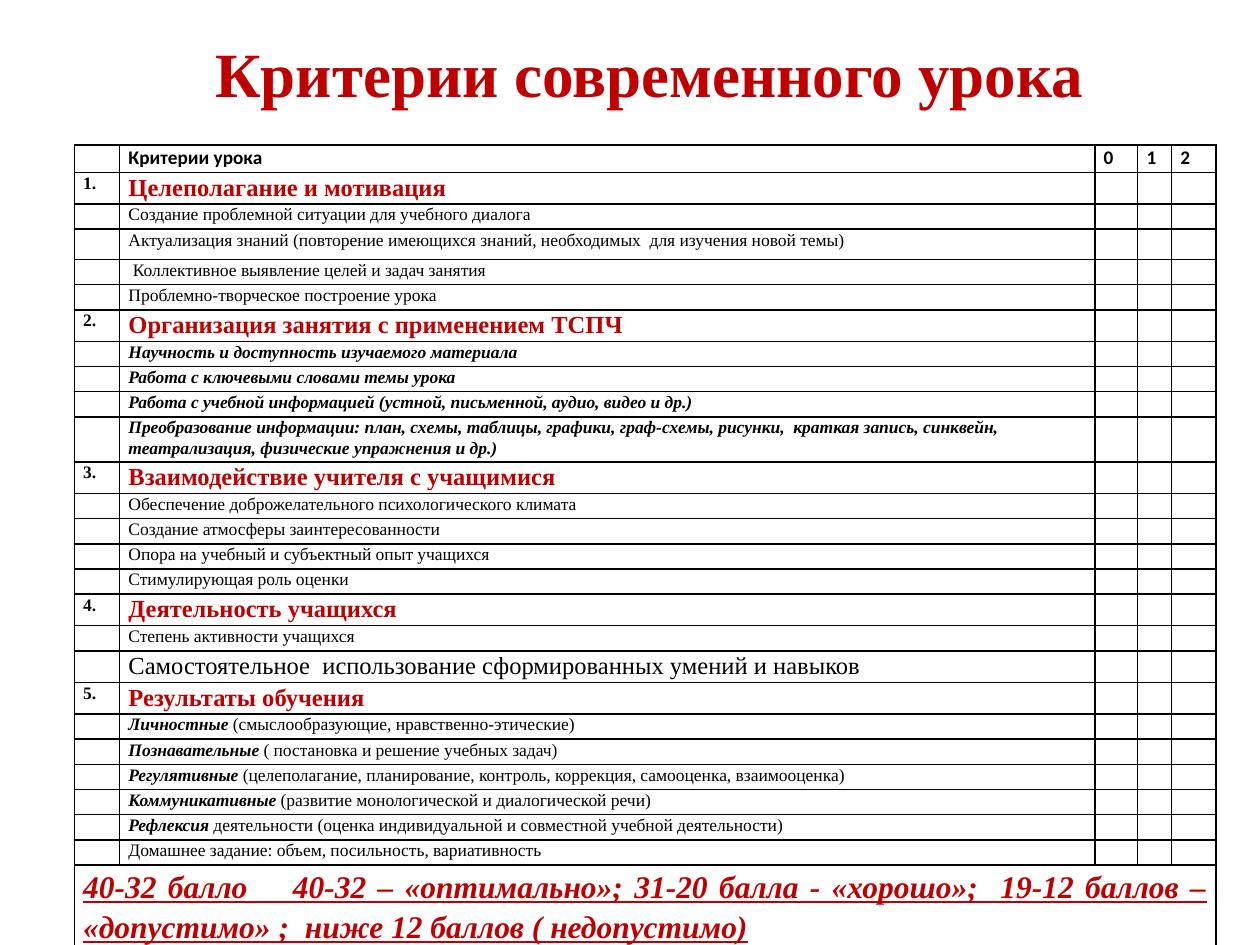
from dataclasses import dataclass

from lxml import etree
from pptx import Presentation
from pptx import util as u
from pptx.dml.color import RGBColor
from pptx.enum import text
from pptx.oxml.ns import qn


@dataclass(frozen=True)
class Theme:
    serif: str = "Times New Roman"
    sans: str = "Calibri"
    ink: str = "000000"
    accent: str = "C00000"
    paper: str = "FFFFFF"
    title: int = 36
    score: int = 18
    section: int = 14
    header: int = 11
    body: int = 10
    border: int = 1
    inset: float = 0.07
    leading: float = 1.07


T = Theme()
PLAIN = dict(name=T.serif, size=T.body, color=T.ink, bold=False, italic=False)
BOLD = {**PLAIN, "bold": True}
LEAD = {**BOLD, "italic": True}
LARGE = {**PLAIN, "size": T.section}
HEADER = {**BOLD, "name": T.sans, "size": T.header}
SECTION = {**BOLD, "size": T.section, "color": T.accent}
SCORE = {**LEAD, "size": T.score, "color": T.accent, "underline": True}
TITLE = {**BOLD, "size": T.title, "color": T.accent}

# Column widths and row heights in percent of the slide's width and height
COLUMNS = [3.6, 77.4, 3.4, 2.7, 3.5]
ROW, HEADER_ROW, LOOSE_ROW, WRAPPED_ROW, SCORE_ROW = 2.67, 2.93, 3.2, 3.6, 12.93

# Each criterion is a list of (wording, style) runs
SECTIONS = [
    ("Целеполагание и мотивация", [
        [("Создание проблемной ситуации для учебного диалога", PLAIN)],
        [("Актуализация знаний (повторение имеющихся знаний, необходимых  для изучения новой темы)", PLAIN)],
        [(" Коллективное выявление целей и задач занятия", PLAIN)],
        [("Проблемно-творческое построение урока", PLAIN)],
    ]),
    ("Организация занятия с применением ТСПЧ", [
        [("Научность и доступность изучаемого материала", LEAD)],
        [("Работа с ключевыми словами темы урока", LEAD)],
        [("Работа с учебной информацией (устной, письменной, аудио, видео и др.)", LEAD)],
        [("Преобразование информации: план, схемы, таблицы, графики, граф-схемы, рисунки,  "
          "краткая запись, синквейн, театрализация, физические упражнения и др.)", LEAD)],
    ]),
    ("Взаимодействие учителя с учащимися", [
        [("Обеспечение доброжелательного психологического климата", PLAIN)],
        [("Создание атмосферы заинтересованности", PLAIN)],
        [("Опора на учебный и субъектный опыт учащихся", PLAIN)],
        [("Стимулирующая роль оценки", PLAIN)],
    ]),
    ("Деятельность учащихся", [
        [("Степень активности учащихся", PLAIN)],
        [("Самостоятельное  использование сформированных умений и навыков", LARGE)],
    ]),
    ("Результаты обучения", [
        [("Личностные ", LEAD), ("(смыслообразующие, нравственно-этические)", PLAIN)],
        [("Познавательные ", LEAD), ("( постановка и решение учебных задач)", PLAIN)],
        [("Регулятивные ", LEAD),
         ("(целеполагание, планирование, контроль, коррекция, самооценка, взаимооценка)", PLAIN)],
        [("Коммуникативные ", LEAD), ("(развитие монологической и диалогической речи)", PLAIN)],
        [("Рефлексия ", LEAD),
         ("деятельности (оценка индивидуальной и совместной учебной деятельности)", PLAIN)],
        [("Домашнее задание: объем, посильность, вариативность", PLAIN)],
    ]),
]
SCORING = ("40-32 балло    40-32 – «оптимально»; 31-20 балла - «хорошо»;  "
           "19-12 баллов – «допустимо» ;  ниже 12 баллов ( недопустимо)")


class Deck:
    def __init__(self, theme):
        self.theme = theme
        self.prs = Presentation()
        self.prs.slide_width, self.prs.slide_height = u.Inches(10), u.Inches(7.5)
        self.s = self.prs.slides.add_slide(self.prs.slide_layouts[6])

    def x(self, percent):
        return round(self.prs.slide_width * percent / 100)

    def y(self, percent):
        return round(self.prs.slide_height * percent / 100)

    def box(self, left, top, width, height):
        return self.x(left), self.y(top), self.x(width), self.y(height)

    def add_runs(self, p, runs, **paragraph_format):
        for key, value in paragraph_format.items():
            setattr(p, key, value)
        for wording, style in runs:
            r = p.add_run()
            r.text = wording
            for key, value in style.items():
                if key == "color":
                    r.font.color.rgb = RGBColor.from_string(value)
                else:
                    setattr(r.font, key, u.Pt(value) if key == "size" else value)
        if not runs:
            # An empty cell must not stretch its row with the default size
            end = p._p.get_or_add_endParaRPr()
            end.set("sz", str(self.theme.body * 100))

    def title(self, wording, *place):
        tf = self.s.shapes.add_textbox(*self.box(*place)).text_frame
        tf.word_wrap = True
        tf.vertical_anchor = text.MSO_ANCHOR.MIDDLE
        self.add_runs(tf.paragraphs[0], [(wording, TITLE)], alignment=text.PP_ALIGN.CENTER)

    def frame_cell(self, cell):
        """Set a cell's insets, four borders and fill."""
        inset = u.Inches(self.theme.inset)
        for key, value in dict(margin_left=inset, margin_right=inset,
                               margin_top=0, margin_bottom=0).items():
            setattr(cell, key, value)
        tc_pr = cell._tc.get_or_add_tcPr()
        for side in "LRTB":
            line = etree.SubElement(tc_pr, qn(f"a:ln{side}"), w=str(u.Pt(self.theme.border)))
            fill = etree.SubElement(line, qn("a:solidFill"))
            etree.SubElement(fill, qn("a:srgbClr"), val=self.theme.ink)
        cell.fill.solid()
        cell.fill.fore_color.rgb = RGBColor.from_string(self.theme.paper)

    def table(self, left, top, columns, rows):
        """Draw rows of (height, cells), each cell being a list of runs."""
        place = self.box(left, top, sum(columns), sum(height for height, _ in rows))
        table = self.s.shapes.add_table(len(rows), len(columns), *place).table
        table.first_row = table.horz_banding = False
        for column, width in zip(table.columns, columns):
            column.width = self.x(width)
        for row, (height, cells) in zip(table.rows, rows):
            row.height = self.y(height)
            for i, cell in enumerate(row.cells):
                self.frame_cell(cell)
                self.add_runs(cell.text_frame.paragraphs[0], cells[i] if i < len(cells) else [],
                              line_spacing=self.theme.leading)
        return table


def criteria_rows():
    heads = ["Критерии урока", "0", "1", "2"]
    rows = [(HEADER_ROW, [[]] + [[(head, HEADER)] for head in heads])]
    special = {SECTIONS[0][1][1][0][0]: LOOSE_ROW, SECTIONS[1][1][3][0][0]: WRAPPED_ROW}
    for number, (name, criteria) in enumerate(SECTIONS, 1):
        rows.append((ROW, [[(f"{number}.", BOLD)], [(name, SECTION)]]))
        rows += [(special.get(runs[0][0], ROW), [[], runs]) for runs in criteria]
    return rows + [(SCORE_ROW, [[(SCORING, SCORE)]])]


def main():
    deck = Deck(T)
    deck.title("Критерии современного урока", 5.9, 2.4, 91.3, 10.53)
    rows = criteria_rows()
    table = deck.table(5.9, 15.33, COLUMNS, rows)
    last = len(rows) - 1
    score = table.cell(last, 0)
    score.merge(table.cell(last, len(COLUMNS) - 1))
    for key, value in dict(alignment=text.PP_ALIGN.JUSTIFY, line_spacing=1.15,
                           space_after=u.Pt(10)).items():
        setattr(score.text_frame.paragraphs[0], key, value)
    deck.prs.save("out.pptx")


if __name__ == "__main__":
    main()
